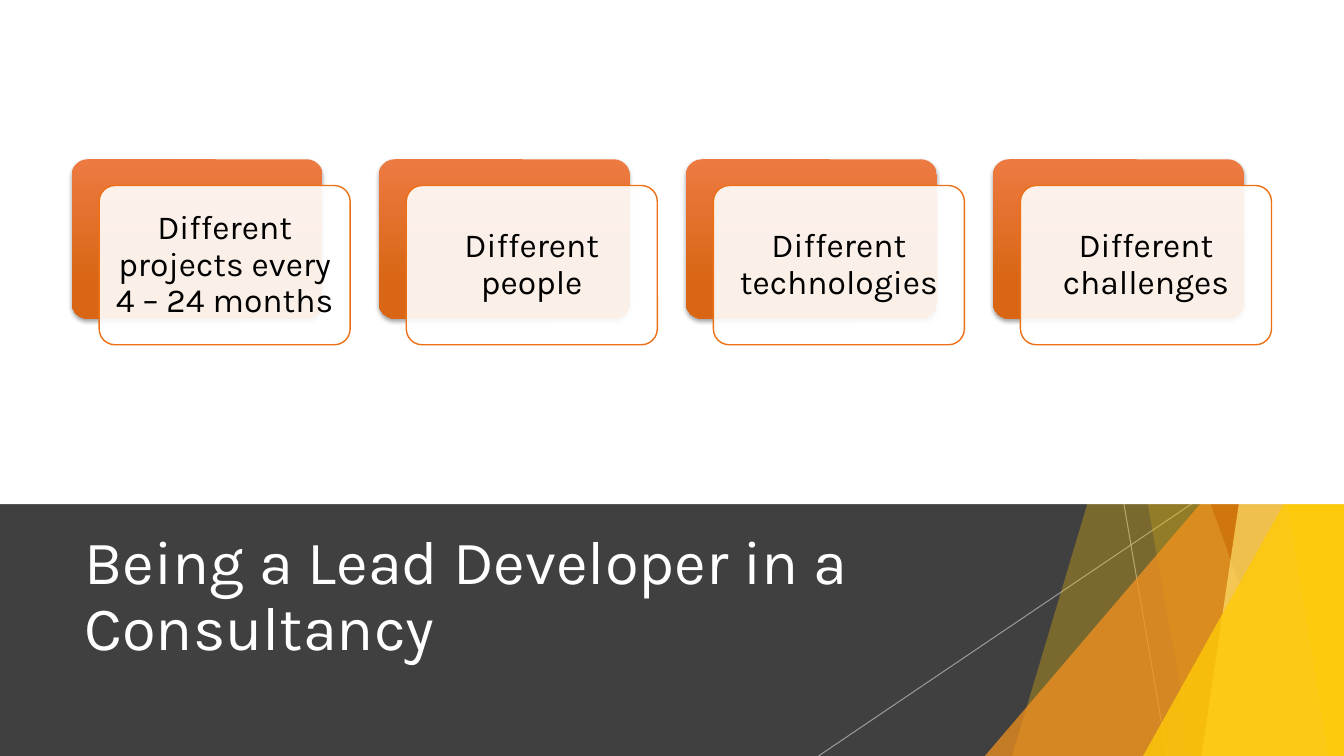
"""Build the slide on being a lead developer in a consultancy."""
from lxml import etree
from pptx import Presentation
from pptx import util as u
from pptx.dml import color
from pptx.enum import shapes, text
from pptx.oxml import ns

WIDTH, HEIGHT = u.Inches(13.333), u.Inches(7.5)
FONT = "Karla"
SPLIT = 66.67
CARD_LEFT, CARD_TOP, CARD_PITCH = 5.33, 21.07, 22.85
CARD_WIDTH, CARD_HEIGHT = 18.68, 21.07
SHIFT_X, SHIFT_Y = 2.05, 3.47
CARDS = [
    "Different projects every 4 – 24 months",
    "Different people",
    "Different technologies",
    "Different challenges",
]


def across(share):
    """Turn a percentage of the slide's width into a length."""
    return u.Emu(round(WIDTH * share / 100))


def down(share):
    """Turn a percentage of the slide's height into a length."""
    return u.Emu(round(HEIGHT * share / 100))


def area(left, top, width, height):
    """Return a frame given in percentages as lengths."""
    return across(left), down(top), across(width), down(height)


def rgb(value):
    """Return the colour for a hex string."""
    return color.RGBColor.from_string(value)


def add_node(parent, tag, **attributes):
    """Append a drawing element with the given attributes."""
    return etree.SubElement(parent, ns.qn(tag), {k: str(v) for k, v in attributes.items()})


def set_opacity(shape, percent):
    """Give every colour set on the shape so far an opacity."""
    for node in shape._element.spPr.xpath(".//a:srgbClr"):
        add_node(node, "a:alpha", val=percent * 1000)


def paint(shape, fill, opacity=100):
    """Fill a shape plainly, without outline or shadow."""
    shape.shadow.inherit = False
    shape.fill.solid()
    shape.fill.fore_color.rgb = rgb(fill)
    shape.line.fill.background()
    if opacity < 100:
        set_opacity(shape, opacity)


def add_panel(page, top, height, fill):
    """Add a full-width rectangle."""
    panel = page.shapes.add_shape(shapes.MSO_SHAPE.RECTANGLE, *area(0, top, 100, height))
    paint(panel, fill)


def add_ray(page, top_x, bottom_x):
    """Add a thin pale line from the panel's top to the slide's bottom."""
    ray = page.shapes.add_connector(
        shapes.MSO_CONNECTOR.STRAIGHT,
        across(top_x), down(SPLIT), across(bottom_x), down(100))
    ray.line.color.rgb = rgb("BFBFBF")
    ray.line.width = u.Pt(0.75)
    set_opacity(ray, 70)
    add_node(ray._element.spPr, "a:effectLst")


def add_facet(page, top_x, bottom_x, fill, opacity):
    """Add a full-height facet with a slanted left edge."""
    outline = page.shapes.build_freeform(across(top_x), 0)
    outline.add_line_segments(
        [(across(100), 0), (across(100), down(100)), (across(bottom_x), down(100))],
        close=True)
    paint(outline.convert_to_shape(), fill, opacity)


def add_corner(page, left, top, fill, opacity):
    """Add a right triangle that fills the slide's bottom right corner."""
    corner = page.shapes.add_shape(
        shapes.MSO_SHAPE.ISOSCELES_TRIANGLE, *area(left, top, 100 - left, 100 - top))
    corner.adjustments[0] = 1
    paint(corner, fill, opacity)


def write(shape, words, size, ink, align):
    """Write one vertically centred paragraph into a shape."""
    frame = shape.text_frame
    frame.word_wrap = True
    frame.vertical_anchor = text.MSO_ANCHOR.MIDDLE
    para = frame.paragraphs[0]
    para.alignment = align
    para.line_spacing = 0.9
    span = para.add_run()
    span.text = words
    span.font.name = FONT
    span.font.size = u.Pt(size)
    span.font.color.rgb = rgb(ink)


def add_plate(page, left, top):
    """Add a rounded rectangle of the cards' size."""
    plate = page.shapes.add_shape(
        shapes.MSO_SHAPE.ROUNDED_RECTANGLE, *area(left, top, CARD_WIDTH, CARD_HEIGHT))
    plate.adjustments[0] = 0.1
    paint(plate, "FFFFFF")
    return plate


def add_card(page, left, words):
    """Add an orange plate with a translucent captioned plate over it."""
    back = add_plate(page, left, CARD_TOP)
    back.fill.gradient()
    back.fill.gradient_angle = 270
    for stop, (place, tint) in zip(back.fill.gradient_stops, [(0, "ED7A41"), (0.78, "D86614")]):
        stop.position = place
        stop.color.rgb = rgb(tint)
    effects = back._element.spPr.find(ns.qn("a:effectLst"))
    shadow = add_node(effects, "a:outerShdw", blurRad=u.Pt(3), dist=u.Pt(2),
                      dir=5400000, rotWithShape=0)
    shade = add_node(shadow, "a:srgbClr", val="000000")
    add_node(shade, "a:alpha", val=35000)

    front = add_plate(page, left + SHIFT_X, CARD_TOP + SHIFT_Y)
    set_opacity(front, 90)
    front.line.color.rgb = rgb("EC7016")
    front.line.width = u.Pt(1)
    frame = front.text_frame
    frame.margin_left = frame.margin_right = u.Inches(0.1)
    frame.margin_top = frame.margin_bottom = u.Inches(0.1)
    write(front, words, 24, "000000", text.PP_ALIGN.CENTER)


def main():
    """Build and save the deck."""
    deck = Presentation()
    deck.slide_width, deck.slide_height = WIDTH, HEIGHT
    page = deck.slides.add_slide(deck.slide_layouts[6])

    add_panel(page, SPLIT, 100 - SPLIT, "404040")
    add_ray(page, 83.63, 86.85)
    add_ray(page, 88.65, 60.9)
    add_facet(page, 92.1, 75.3, "FFCA08", 30)
    add_facet(page, 78.75, 88.73, "FFCA08", 20)
    add_corner(page, 73.28, 44.4, "F8931D", 72)
    add_facet(page, 76.58, 96.83, "CA6F06", 70)
    add_facet(page, 97.73, 89.4, "FFDF6B", 70)
    add_facet(page, 89.7, 98.85, "FFCA08", 65)
    add_corner(page, 85.05, 52.4, "FFCA08", 80)
    add_panel(page, 0, SPLIT, "FFFFFF")

    title = page.shapes.add_textbox(*area(5.55, 69.47, 70.5, 19.2))
    write(title, "Being a Lead Developer in a Consultancy", 44, "FFFFFF", text.PP_ALIGN.LEFT)
    for index, words in enumerate(CARDS):
        add_card(page, CARD_LEFT + index * CARD_PITCH, words)

    deck.save("out.pptx")


if __name__ == "__main__":
    main()
